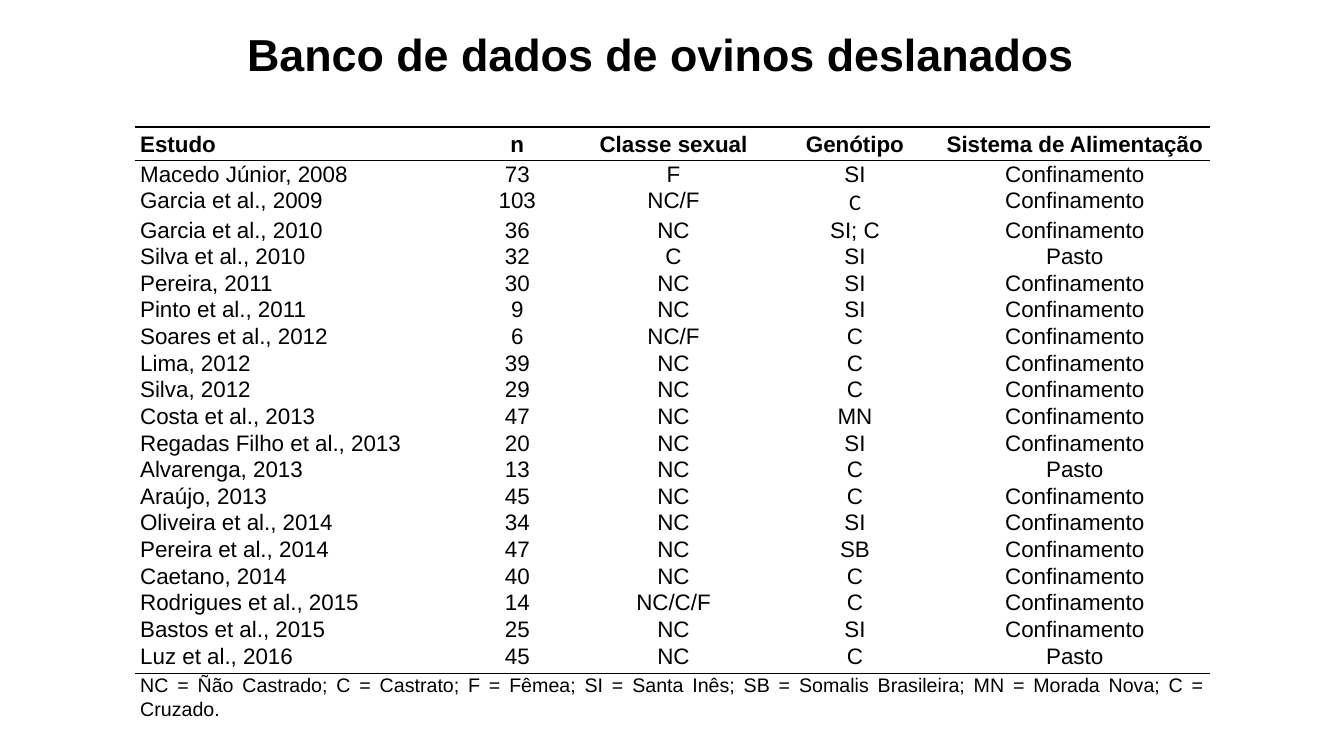
"""Builds the slide on the hairless sheep database."""
from lxml import etree
from pptx import Presentation
from pptx import util as u
from pptx.dml.color import RGBColor
from pptx.enum import text
from pptx.oxml.ns import qn

BLACK = RGBColor(0x00, 0x00, 0x00)
COLUMN_WIDTHS = (3.2, 1.18, 1.92, 1.68, 2.68)
HEADINGS = ("Estudo", "n", "Classe sexual", "Genótipo", "Sistema de Alimentação")
STUDIES = (
    ("Macedo Júnior, 2008", "73", "F", "SI", "Confinamento"),
    ("Garcia et al., 2009", "103", "NC/F", "C", "Confinamento"),
    ("Garcia et al., 2010", "36", "NC", "SI; C", "Confinamento"),
    ("Silva et al., 2010", "32", "C", "SI", "Pasto"),
    ("Pereira, 2011", "30", "NC", "SI", "Confinamento"),
    ("Pinto et al., 2011", "9", "NC", "SI", "Confinamento"),
    ("Soares et al., 2012", "6", "NC/F", "C", "Confinamento"),
    ("Lima, 2012", "39", "NC", "C", "Confinamento"),
    ("Silva, 2012", "29", "NC", "C", "Confinamento"),
    ("Costa et al., 2013", "47", "NC", "MN", "Confinamento"),
    ("Regadas Filho et al., 2013", "20", "NC", "SI", "Confinamento"),
    ("Alvarenga, 2013", "13", "NC", "C", "Pasto"),
    ("Araújo, 2013", "45", "NC", "C", "Confinamento"),
    ("Oliveira et al., 2014", "34", "NC", "SI", "Confinamento"),
    ("Pereira et al., 2014", "47", "NC", "SB", "Confinamento"),
    ("Caetano, 2014", "40", "NC", "C", "Confinamento"),
    ("Rodrigues et al., 2015", "14", "NC/C/F", "C", "Confinamento"),
    ("Bastos et al., 2015", "25", "NC", "SI", "Confinamento"),
    ("Luz et al., 2016", "45", "NC", "C", "Pasto"),
)
LEGEND = ("NC = Ñão Castrado; C = Castrato; F = Fêmea; SI = Santa Inês; "
          "SB = Somalis Brasileira; MN = Morada Nova; C = Cruzado.")


class SheepSlide:
    def __init__(self, deck, font="Arial", ink=BLACK):
        self.slide = deck.slides.add_slide(deck.slide_layouts[5])
        self.font, self.ink = font, ink

    def add_words(self, paragraph, words, size, bold=False, font=None):
        run = paragraph.add_run()
        run.text = words
        run.font.name = font or self.font
        run.font.size = u.Pt(size)
        run.font.bold = bold
        run.font.color.rgb = self.ink

    def title(self, words, left, top, width, height):
        heading = self.slide.shapes.title
        heading.left, heading.top = u.Inches(left), u.Inches(top)
        heading.width, heading.height = u.Inches(width), u.Inches(height)
        frame = heading.text_frame
        frame.word_wrap = True
        frame.vertical_anchor = text.MSO_ANCHOR.MIDDLE
        paragraph = frame.paragraphs[0]
        paragraph.alignment = text.PP_ALIGN.LEFT
        paragraph.line_spacing = 0.9
        self.add_words(paragraph, words, 32, bold=True)

    def table(self, left, top, widths, heights):
        frame = self.slide.shapes.add_table(
            len(heights), len(widths), u.Inches(left), u.Inches(top),
            u.Inches(sum(widths)), u.Inches(sum(heights)))
        grid = frame.table
        grid.first_row = grid.horz_banding = False
        for column, width in zip(grid.columns, widths):
            column.width = u.Inches(width)
        for row, height in zip(grid.rows, heights):
            row.height = u.Inches(height)
        return grid

    def rules(self, cell, above, below):
        properties = cell._tc.get_or_add_tcPr()
        for side, ruled in (("L", False), ("R", False), ("T", above), ("B", below)):
            rule = etree.SubElement(properties, qn(f"a:ln{side}"), w=str(u.Pt(1)))
            if ruled:
                fill = etree.SubElement(rule, qn("a:solidFill"))
                etree.SubElement(fill, qn("a:srgbClr"), val=str(self.ink))
            else:
                etree.SubElement(rule, qn("a:noFill"))
        cell.fill.background()

    def cell(self, cell, words, size, align, bold=False, font=None):
        cell.margin_left = cell.margin_right = u.Inches(0.05)
        cell.margin_top = cell.margin_bottom = 0
        cell.vertical_anchor = text.MSO_ANCHOR.MIDDLE if bold else text.MSO_ANCHOR.TOP
        paragraph = cell.text_frame.paragraphs[0]
        paragraph.alignment = align
        paragraph.line_spacing = 1.07
        paragraph.space_after = u.Pt(8)
        if words:
            self.add_words(paragraph, words, size, bold, font)
        else:
            etree.SubElement(paragraph._p, qn("a:endParaRPr"), sz=str(size * 100))


def main():
    deck = Presentation()
    deck.slide_width, deck.slide_height = u.Inches(13.33), u.Inches(7.5)
    page = SheepSlide(deck)
    page.title("Banco de dados de ovinos deslanados", 2.35, 0.17, 8.62, 0.79)

    heights = [0.29, 0.33] + [0.23] * (len(STUDIES) - 1) + [0.31, 0.27]
    grid = page.table(1.34, 0.97, COLUMN_WIDTHS, heights)
    last = len(heights) - 1
    ruled_below = (0, 1, last - 1)
    for r, row in enumerate(grid.rows):
        for cell in row.cells:
            page.rules(cell, r - 1 in ruled_below, r in ruled_below)

    for r, values in enumerate((HEADINGS, *STUDIES), start=1):
        for c, value in enumerate(values):
            align = text.PP_ALIGN.CENTER if c else text.PP_ALIGN.LEFT
            font = "Calibri" if (r, c) == (3, 3) else None
            page.cell(grid.cell(r, c), value, 16, align, bold=r == 1, font=font)

    for r, words, size in ((0, "", 16), (last, LEGEND, 14)):
        grid.cell(r, 0).merge(grid.cell(r, len(COLUMN_WIDTHS) - 1))
        page.cell(grid.cell(r, 0), words, size, text.PP_ALIGN.JUSTIFY)
    deck.save("out.pptx")


if __name__ == "__main__":
    main()
